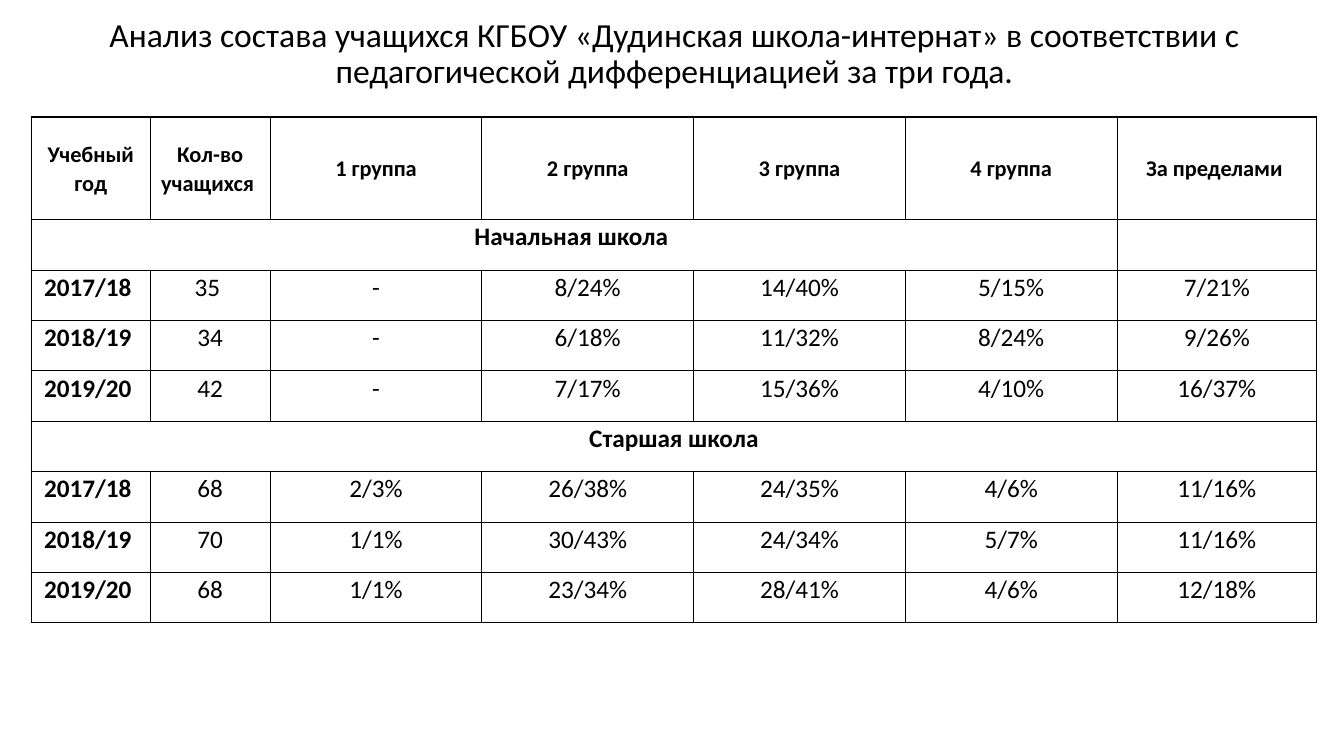
"""Builds a slide with a table of pupil groups over three school years."""
from lxml import etree
from pptx import Presentation
from pptx import util as u
from pptx.dml.color import RGBColor
from pptx.enum import text
from pptx.oxml import ns

BLACK = RGBColor(0, 0, 0)
FONT = "Calibri"
TITLE = ("Анализ состава учащихся КГБОУ «Дудинская школа-интернат» в соответствии с "
         "педагогической дифференциацией за три года.")
COLUMN_WIDTHS = [1.18, 1.19, 2.1, 2.1, 2.1, 2.1, 1.98]
HEADER_HEIGHT, ROW_HEIGHT = 1.02, 0.5
SECTION_SPANS = {1: 6, 5: 7}
ROWS = [
    ["Учебный год", "Кол-во учащихся ", "1 группа", "2 группа", "3 группа", "4 группа", "За пределами "],
    ["Начальная школа "],
    ["2017/18 ", "35 ", "-", "8/24%", "14/40%", "5/15%", "7/21%"],
    ["2018/19 ", "34", "-", "6/18%", "11/32%", "8/24%", "9/26%"],
    ["2019/20 ", "42", "-", "7/17%", "15/36%", "4/10%", "16/37%"],
    ["Старшая школа"],
    ["2017/18 ", "68", "2/3%", "26/38%", "24/35%", "4/6%", "11/16%"],
    ["2018/19 ", "70", "1/1%", "30/43%", "24/34%", "5/7%", "11/16%"],
    ["2019/20 ", "68", "1/1%", "23/34%", "28/41%", "4/6%", "12/18%"],
]


def write(para, words, size, bold, spacing):
    para.alignment = text.PP_ALIGN.CENTER
    para.line_spacing = spacing
    span = para.add_run()
    span.text = words
    span.font.name = FONT
    span.font.size = u.Pt(size)
    span.font.bold = bold
    span.font.color.rgb = BLACK


def add_borders(cell):
    properties = cell._tc.get_or_add_tcPr()
    for side in ("a:lnL", "a:lnR", "a:lnT", "a:lnB"):
        line = etree.SubElement(properties, ns.qn(side), w=str(u.Pt(1)))
        fill = etree.SubElement(line, ns.qn("a:solidFill"))
        etree.SubElement(fill, ns.qn("a:srgbClr"), val=str(BLACK))


deck = Presentation()
deck.slide_width, deck.slide_height = u.Inches(13.33), u.Inches(7.5)
page = deck.slides.add_slide(deck.slide_layouts[5])

title = page.shapes.title
title.left, title.top = u.Inches(0.31), u.Inches(0.1)
title.width, title.height = u.Inches(12.76), u.Inches(0.88)
title.text_frame.vertical_anchor = text.MSO_ANCHOR.MIDDLE
write(title.text_frame.paragraphs[0], TITLE, 24, False, 0.9)

table = page.shapes.add_table(
    len(ROWS), len(COLUMN_WIDTHS), u.Inches(0.31), u.Inches(1.16), u.Inches(12.76), u.Inches(5.02)).table
table.first_row = False
table.horz_banding = False
for column, width in zip(table.columns, COLUMN_WIDTHS):
    column.width = u.Inches(width)

for row_index, (row, values) in enumerate(zip(table.rows, ROWS)):
    is_header = row_index == 0
    row.height = u.Inches(ROW_HEIGHT if row_index else HEADER_HEIGHT)
    for cell in row.cells:
        cell.margin_left = cell.margin_right = u.Inches(0.07)
        cell.margin_top = cell.margin_bottom = 0
        cell.vertical_anchor = text.MSO_ANCHOR.MIDDLE if is_header else text.MSO_ANCHOR.TOP
        add_borders(cell)
        cell.fill.background()
    for column_index, value in enumerate(values):
        para = table.cell(row_index, column_index).text_frame.paragraphs[0]
        write(para, value, 16 if is_header else 18, is_header or column_index == 0, 1.07)

for row_index, span_width in SECTION_SPANS.items():
    table.cell(row_index, 0).merge(table.cell(row_index, span_width - 1))

deck.save("out.pptx")
